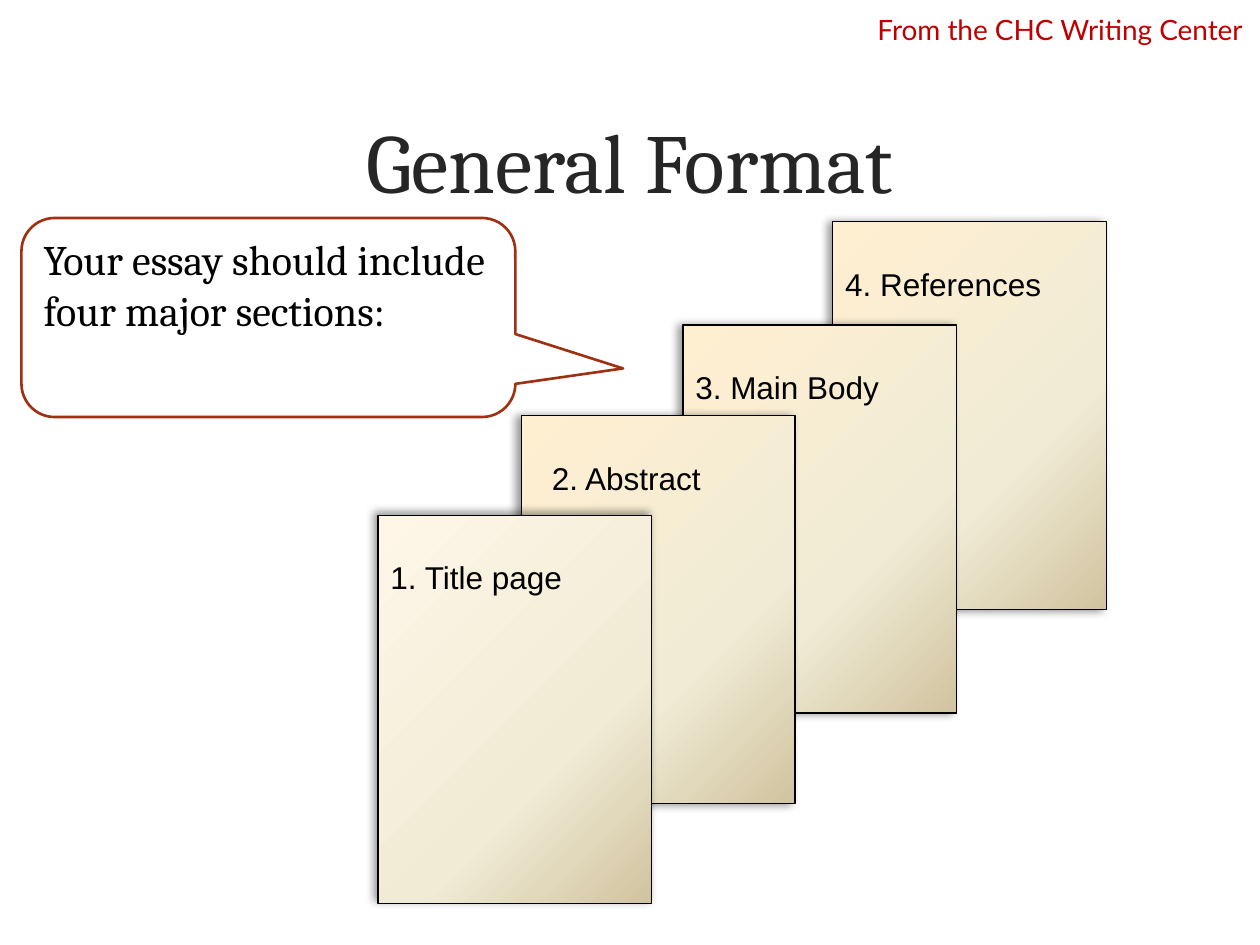
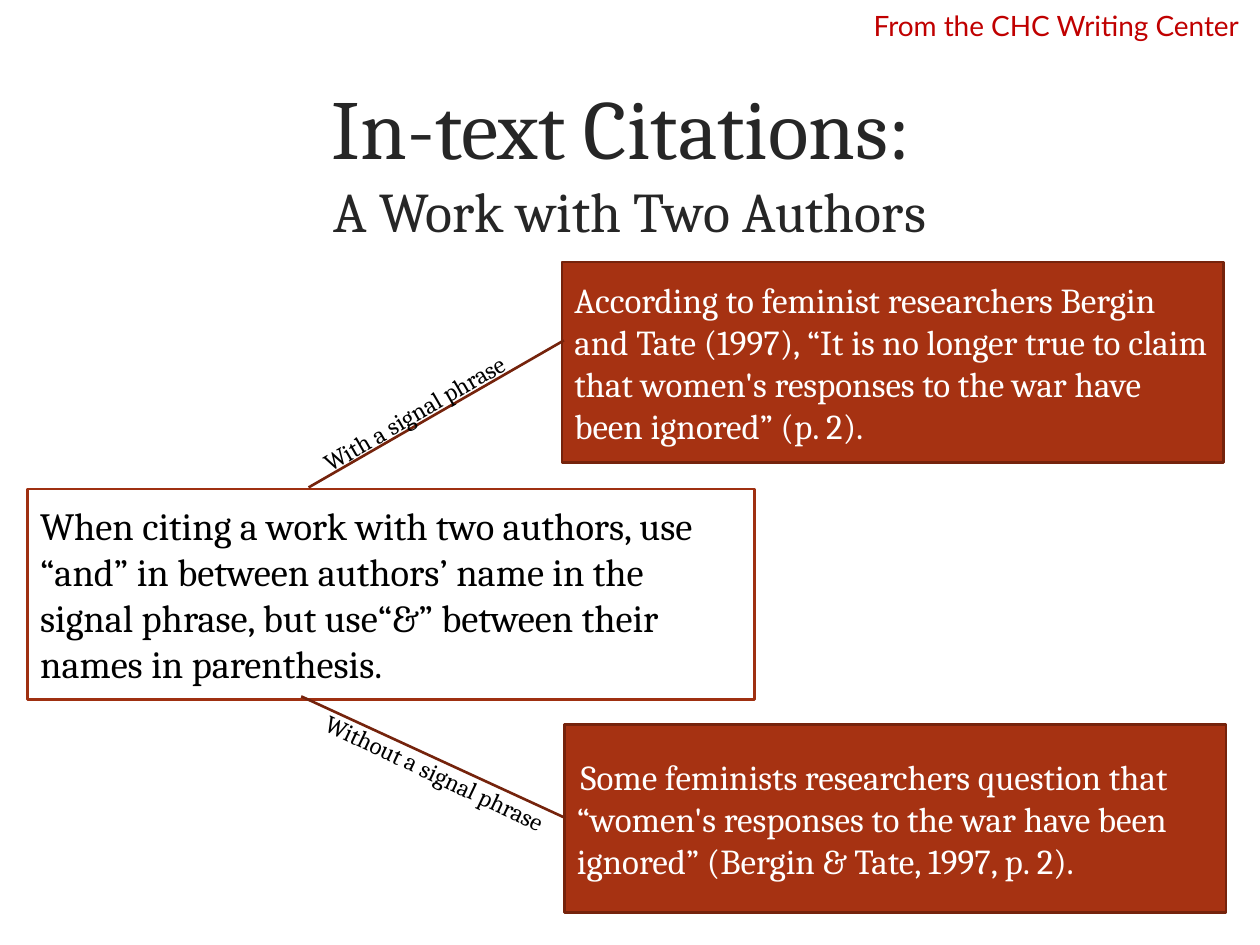
from lxml import etree
from pptx import Presentation
from pptx.dml.color import RGBColor
from pptx.enum.shapes import MSO_SHAPE
from pptx.enum.text import MSO_ANCHOR, PP_ALIGN
from pptx.oxml.ns import qn
from pptx.util import Emu, Inches, Pt

RECTANGLE = MSO_SHAPE.RECTANGLE
SPEECH_BUBBLE = MSO_SHAPE.ROUNDED_RECTANGULAR_CALLOUT
LINE_CALLOUT = MSO_SHAPE.LINE_CALLOUT_1
TOP, MIDDLE = MSO_ANCHOR.TOP, MSO_ANCHOR.MIDDLE
LEFT, CENTER = PP_ALIGN.LEFT, PP_ALIGN.CENTER

COLORS = {
    "white": "FFFFFF",
    "black": "000000",
    "title": "262626",
    "banner": "C00000",
    "outline": "9F3011",
    "example": "A63212",
    "example_line": "75230C",
    "page_start": "FFEFD1",
    "front_page_start": "FFF6E7",
    "page_middle": "F0EBD5",
    "page_end": "D1C39F",
}
SERIF, SANS, BANNER_FONT = "Cambria", "Arial", "Lato"
PAGE_SIZE = (2.17, 3.08)
EXAMPLE_WIDTH = 5.25


def rgb(name):
    return RGBColor.from_string(COLORS[name])


def write(shape, text, size, font=SERIF, color="black", anchor=MIDDLE, align=LEFT):
    frame = shape.text_frame
    frame.word_wrap = True
    frame.vertical_anchor = anchor
    frame.text = text
    paragraph = frame.paragraphs[0]
    paragraph.alignment = align
    for run in paragraph.runs:
        run.font.size = Pt(size)
        run.font.name = font
        run.font.color.rgb = rgb(color)
    return paragraph


def add_text(slide, box, text, size, **style):
    text_box = slide.shapes.add_textbox(*map(Inches, box))
    return text_box, write(text_box, text, size, **style)


def add_panel(slide, kind, box, fill, line, line_width=1.5, adjustments=()):
    shape = slide.shapes.add_shape(kind, *map(Inches, box))
    shape.shadow.inherit = False
    shape.fill.solid()
    shape.fill.fore_color.rgb = rgb(fill)
    shape.line.color.rgb = rgb(line)
    shape.line.width = Pt(line_width)
    for index, value in enumerate(adjustments):
        shape.adjustments[index] = value
    return shape


def add_color(parent, name):
    return etree.SubElement(parent, qn("a:srgbClr"), val=COLORS[name])


def set_paper_gradient(shape, start):
    shape.fill.gradient()
    shape.fill.gradient_angle = 315
    stops = shape._element.spPr.find(qn("a:gradFill")).find(qn("a:gsLst"))
    for stop in list(stops):
        stops.remove(stop)
    for percent, name in ((0, start), (65, "page_middle"), (100, "page_end")):
        add_color(etree.SubElement(stops, qn("a:gs"), pos=str(percent * 1000)), name)


def set_shadow(shape, angle):
    effects = shape._element.spPr.find(qn("a:effectLst"))
    shadow = etree.SubElement(
        effects, qn("a:outerShdw"), blurRad=str(Pt(5)), dist=str(Pt(3)),
        dir=str(angle * 60000), algn="ctr", rotWithShape="0")
    etree.SubElement(add_color(shadow, "black"), qn("a:alpha"), val="40000")


def add_title(slide, text, second_line_size=32):
    _, paragraph = add_text(slide, (0.6, 0.48, 8.8, 1.58), text, 48,
                            color="title", align=CENTER)
    for run in paragraph.runs[1:]:
        run.font.size = Pt(second_line_size)


def add_banner(slide, left, top):
    add_text(slide, (left, top, 3.17, 0.4), "From the CHC Writing Center", 16,
             font=BANNER_FONT, color="banner", align=CENTER)


def add_essay_page(slide, left, top, label, start="page_start",
                   shadow_angle=180, indent=0.0):
    page = add_panel(slide, RECTANGLE, (left, top, *PAGE_SIZE),
                     "white", "black", 0.75)
    set_paper_gradient(page, start)
    set_shadow(page, shadow_angle)
    write(page, label, 18, font=SANS, anchor=TOP)
    page.text_frame.margin_top = Inches(0.34)
    page.text_frame.margin_left = Inches(0.1 + indent)


def add_example(slide, top, height, leader, text, first_line_indent=0.0):
    """Filled quotation box whose leader runs back to the rule."""
    left = 4.46 if top < 4 else 4.48
    example = add_panel(slide, LINE_CALLOUT, (left, top, EXAMPLE_WIDTH, height),
                        "example", "example_line", adjustments=leader)
    paragraph = write(example, text, 20, color="white")
    indent = Emu(Inches(first_line_indent))
    paragraph._p.get_or_add_pPr().set("indent", str(indent))


def add_leader_label(slide, box, rotation, text):
    label, _ = add_text(slide, box, text, 14, anchor=TOP)
    label.rotation = rotation


def build_general_format(slide):
    add_title(slide, "General Format")
    add_essay_page(slide, 6.61, 1.76, "4. References")
    add_essay_page(slide, 5.42, 2.58, "3. Main Body")
    add_essay_page(slide, 4.14, 3.3, "2. Abstract", indent=0.14)
    add_essay_page(slide, 3, 4.09, "1. Title page", "front_page_start", 225)
    bubble = add_panel(slide, SPEECH_BUBBLE, (0.17, 1.73, 3.92, 1.58),
                       "white", "outline", adjustments=(0.718, 0.256, 0.167))
    write(bubble, "Your essay should include four major sections:", 24, anchor=TOP)
    add_banner(slide, 6.83, 0.03)


def build_two_authors(slide):
    add_title(slide, "In-text Citations: \vA Work with Two Authors")
    rule = add_panel(slide, RECTANGLE, (0.22, 3.88, 5.77, 1.67), "white", "outline")
    write(rule, "When citing a work with two authors, use “and” in between "
                "authors’ name in the signal phrase, but use“&” between their "
                "names in parenthesis.", 22)
    add_example(slide, 2.08, 1.59, (0.391, 0.003, 1.125, -0.383),
                "According to feminist researchers Bergin and Tate (1997), “It is "
                "no longer true to claim that women's responses to the war have "
                "been ignored” (p. 2).")
    add_example(slide, 5.75, 1.49, (0.499, 0.002, -0.15, -0.398),
                "Some feminists researchers question that “women's responses to "
                "the war have been ignored” (Bergin & Tate, 1997, p. 2).", 0.03)
    add_leader_label(slide, (2.33, 2.94, 2.5, 0.34), 329.8, "With a signal phrase")
    add_leader_label(slide, (2.39, 6.03, 2.39, 0.34), 25.5, "Without a signal phrase")
    add_banner(slide, 6.8, 0)


def main():
    presentation = Presentation()
    presentation.slide_width = Inches(10)
    presentation.slide_height = Inches(7.5)
    blank = presentation.slide_layouts[6]
    for build in (build_general_format, build_two_authors):
        build(presentation.slides.add_slide(blank))
    presentation.save("out.pptx")


if __name__ == "__main__":
    main()
